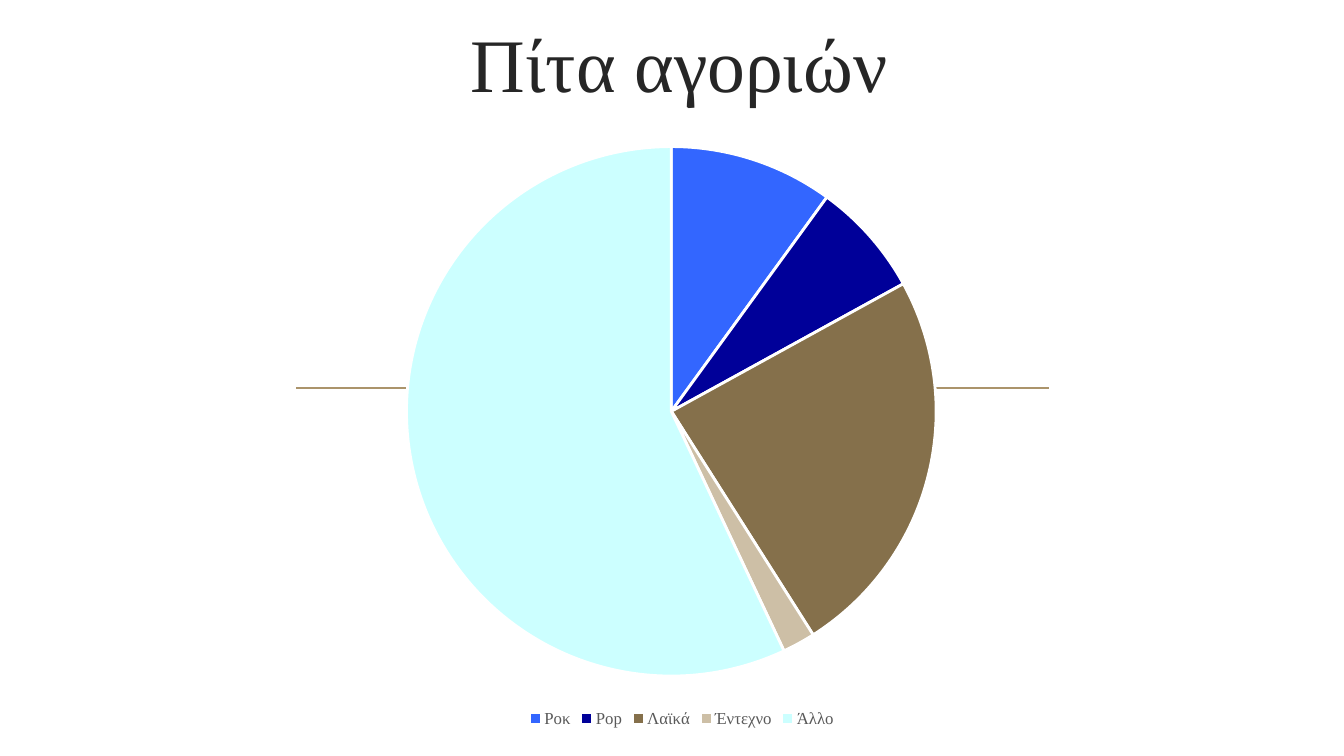
from dataclasses import dataclass

from lxml import etree
from pptx import Presentation
from pptx.chart import data
from pptx.dml.color import RGBColor
from pptx.enum import chart as ch, shapes, text
from pptx.oxml import ns
from pptx.util import Inches, Pt


@dataclass(frozen=True)
class Theme:
    font: str = "Times New Roman"
    ink: str = "262626"
    gray: str = "595959"
    rule: str = "AB946B"
    edge: str = "FFFFFF"
    dark: str = "000000"
    head: int = 54
    base: int = 10
    key: int = 12


THEME = Theme()
GENRES = [
    ("Ροκ", 10, "3366FF"),
    ("Pop", 7, "000099"),
    ("Λαϊκά", 24, "85704B"),
    ("Έντεχνο", 2, "CDBFA6"),
    ("Άλλο", 57, "CCFFFF"),
]


def style(font, size, color):
    font.name = THEME.font
    font.size = Pt(size)
    font.color.rgb = RGBColor.from_string(color)


def write(frame, words, size, color, align, anchor):
    frame.word_wrap = True
    frame.auto_size = text.MSO_AUTO_SIZE.NONE
    frame.vertical_anchor = anchor
    par = frame.paragraphs[0]
    par.alignment = align
    par.line_spacing = 1.0
    run = par.add_run()
    run.text = words
    style(run.font, size, color)


def add_title(slide, words, box):
    title = slide.shapes.title
    title.left, title.top, title.width, title.height = map(Inches, box)
    write(title.text_frame, words, size=THEME.head, color=THEME.ink,
          align=text.PP_ALIGN.CENTER, anchor=text.MSO_ANCHOR.BOTTOM)


def add_rule(slide, left, right, top):
    line = slide.shapes.add_connector(
        shapes.MSO_CONNECTOR.STRAIGHT,
        Inches(left), Inches(top), Inches(right), Inches(top))
    line.line.color.rgb = RGBColor.from_string(THEME.rule)
    line.line.width = Pt(1.25)
    etree.SubElement(line.element.spPr, ns.qn("a:effectLst"))


def place_plot(chart, **frame):
    area = chart.element.find(".//" + ns.qn("c:plotArea"))
    old = area.find(ns.qn("c:layout"))
    if old is not None:
        area.remove(old)
    layout = etree.Element(ns.qn("c:layout"))
    area.insert(0, layout)
    manual = etree.SubElement(layout, ns.qn("c:manualLayout"))
    parts = dict(layoutTarget="inner", xMode="edge", yMode="edge", **frame)
    for tag, value in parts.items():
        etree.SubElement(manual, ns.qn("c:" + tag)).set("val", str(value))


def add_pie(slide, genres, box):
    names, values, colors = zip(*genres)
    source = data.CategoryChartData()
    source.categories = names
    source.add_series("Series 1", values)
    chart = slide.shapes.add_chart(
        ch.XL_CHART_TYPE.PIE, *map(Inches, box), source).chart
    chart.has_title = False
    style(chart.font, THEME.base, THEME.dark)
    chart.has_legend = True
    chart.legend.position = ch.XL_LEGEND_POSITION.BOTTOM
    chart.legend.include_in_layout = False
    style(chart.legend.font, THEME.key, THEME.gray)
    pie = chart.plots[0]
    pie.vary_by_categories = True
    for i, color in enumerate(colors):
        form = pie.series[0].points[i].format
        form.fill.solid()
        form.fill.fore_color.rgb = RGBColor.from_string(color)
        form.line.color.rgb = RGBColor.from_string(THEME.edge)
        form.line.width = Pt(2)
    place_plot(chart, x=0.005, y=0.021, w=0.966, h=0.886)


def main():
    deck = Presentation()
    deck.slide_width, deck.slide_height = Inches(13.33), Inches(7.5)
    slide = deck.slides.add_slide(deck.slide_layouts[5])
    add_rule(slide, left=2.94, right=10.4, top=3.85)
    add_title(slide, "Πίτα αγοριών ", (2.02, 0.12, 9.62, 1))
    add_pie(slide, GENRES, (2.32, 1.33, 8.89, 5.93))
    deck.save("out.pptx")


if __name__ == "__main__":
    main()
